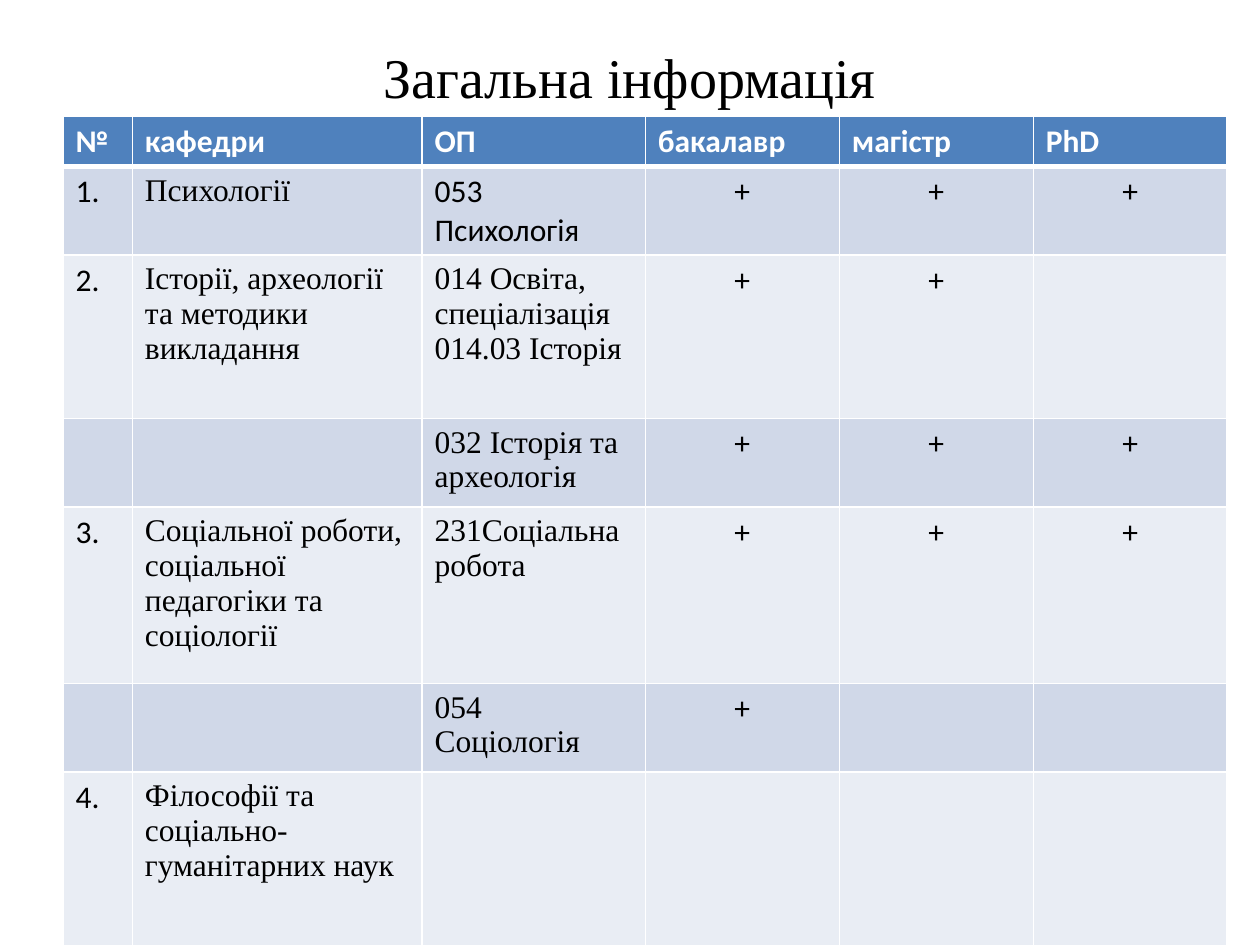
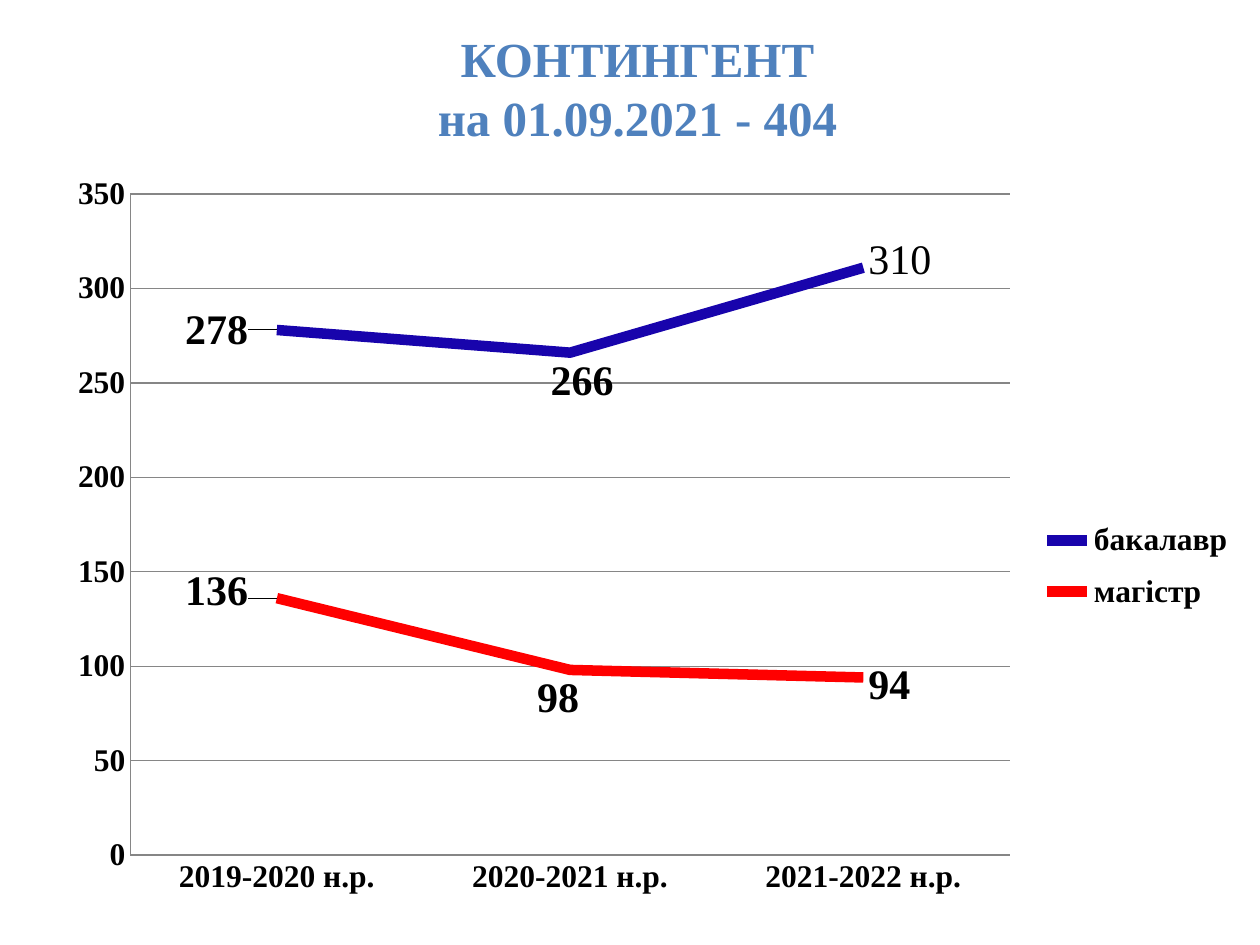
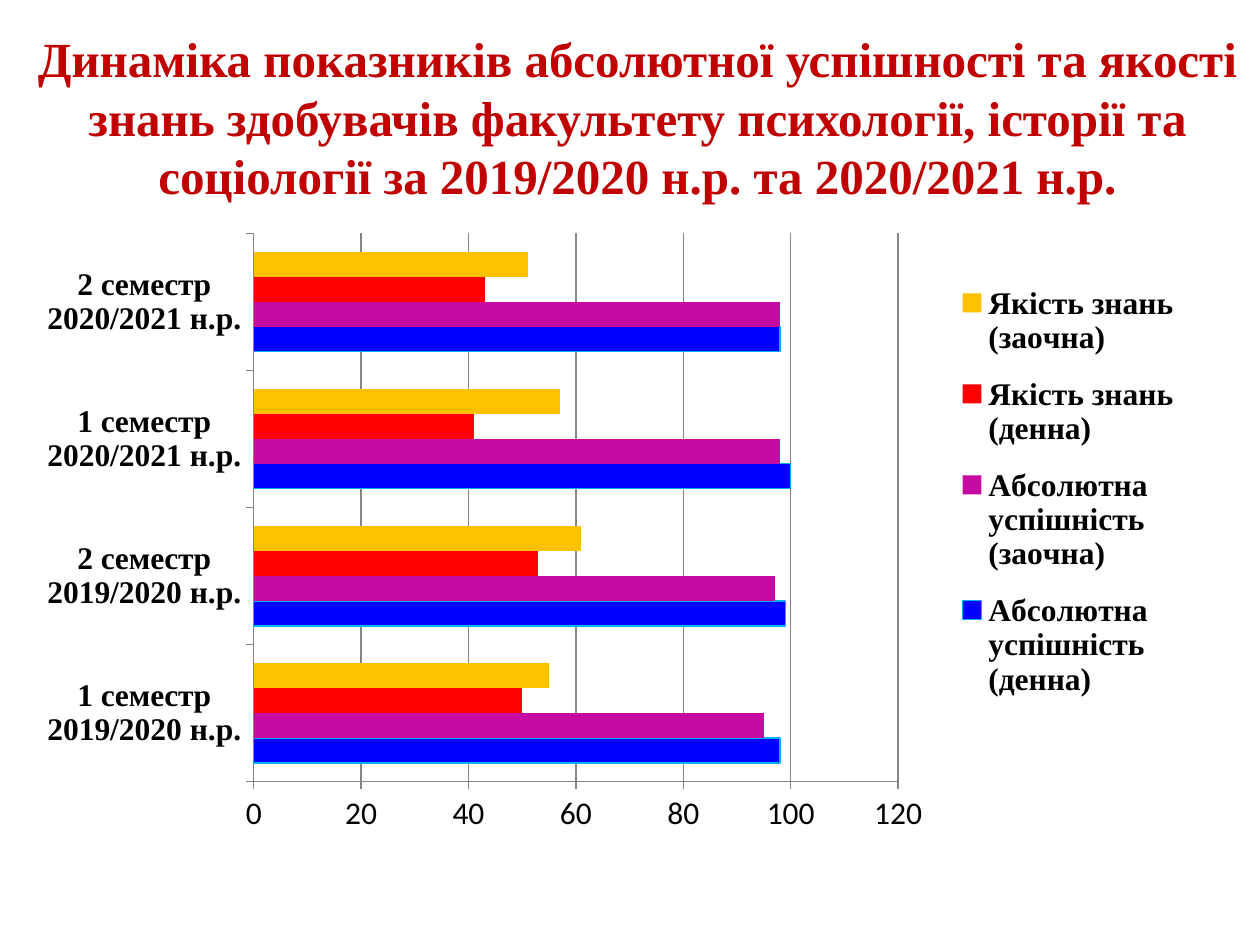
from dataclasses import dataclass

from lxml import etree
from pptx import Presentation
from pptx.chart.axis import _BaseAxis
from pptx.chart.chart import Chart
from pptx.chart.data import CategoryChartData
from pptx.chart.series import LineSeries
from pptx.dml.color import RGBColor
from pptx.enum.chart import XL_CHART_TYPE, XL_LABEL_POSITION, XL_LEGEND_POSITION, XL_TICK_MARK
from pptx.enum.text import MSO_ANCHOR, PP_ALIGN
from pptx.oxml.ns import qn
from pptx.slide import Slide
from pptx.table import _Cell
from pptx.text.text import Font, TextFrame
from pptx.util import Cm, Pt

BLACK = RGBColor(0x00, 0x00, 0x00)
WHITE = RGBColor(0xFF, 0xFF, 0xFF)
BLUE = RGBColor(0x4F, 0x81, 0xBD)
DARK_RED = RGBColor(0xC0, 0x00, 0x00)
BAND_DARK = RGBColor(0xD0, 0xD8, 0xE8)
BAND_LIGHT = RGBColor(0xE9, 0xED, 0xF4)
AXIS_GREY = RGBColor(0x86, 0x86, 0x86)
INDIGO = RGBColor(0x18, 0x04, 0xAC)
RED = RGBColor(0xFF, 0x00, 0x00)
PURE_BLUE = RGBColor(0x00, 0x00, 0xFF)
SKY = RGBColor(0x00, 0xB0, 0xF0)
PURPLE = RGBColor(0xC5, 0x0B, 0xA2)
AMBER = RGBColor(0xFF, 0xC0, 0x00)

SERIF = "Times New Roman"
SANS = "Calibri"


@dataclass(frozen=True)
class Box:
    """A place in centimetres, or in fractions of a chart."""

    left: float
    top: float
    width: float
    height: float

    def lengths(self) -> tuple[Cm, Cm, Cm, Cm]:
        return Cm(self.left), Cm(self.top), Cm(self.width), Cm(self.height)


@dataclass(frozen=True)
class Programme:
    number: str
    department: str
    name: str
    degrees: int
    height: float
    font: str = SERIF


@dataclass(frozen=True)
class PointLabel:
    """A label's side of its point and its shift in fractions of the chart."""

    position: XL_LABEL_POSITION
    dx: float
    dy: float
    text: str = ""


@dataclass(frozen=True)
class Measure:
    name: str
    values: tuple[int, ...]
    color: RGBColor
    outline: RGBColor | None = None
    labels: tuple[PointLabel, ...] = ()


@dataclass(frozen=True)
class ChartPlan:
    kind: XL_CHART_TYPE
    place: Box
    plot: Box
    legend: Box
    categories: tuple[str, ...]
    measures: tuple[Measure, ...]
    maximum: int
    step: int
    ticks: XL_TICK_MARK
    value_font: str
    value_bold: bool


DEGREES = ("бакалавр", "магістр", "PhD")
HEADINGS = ("№", "кафедри", "ОП") + DEGREES
COLUMN_WIDTHS = (1.4, 5.84, 4.5) + (3.91,) * len(DEGREES)
HEADER_HEIGHT = 1.02
PROGRAMMES = (
    Programme("1.", "Психології", "053 Психологія", 3, 1.78, SANS),
    Programme("2.", "Історії, археології та методики викладання",
              "014 Освіта, спеціалізація 014.03 Історія", 2, 3.3),
    Programme("", "", "032 Історія та археологія", 3, 1.78),
    Programme("3.", "Соціальної роботи, соціальної педагогіки та соціології",
              "231Соціальна робота", 3, 3.56),
    Programme("", "", "054 Соціологія", 1, 1.78),
    Programme("4.", "Філософії та соціально-гуманітарних наук", "", 0, 3.56),
)

LEFT, BELOW, RIGHT = XL_LABEL_POSITION.LEFT, XL_LABEL_POSITION.BELOW, XL_LABEL_POSITION.RIGHT
ENROLMENT = ChartPlan(
    kind=XL_CHART_TYPE.LINE,
    place=Box(1.09, 3.28, 24, 15.06),
    plot=Box(0.064, 0.042, 0.739, 0.885),
    legend=Box(0.825, 0.46, 0.17, 0.16),
    categories=("2019-2020 н.р.", "2020-2021 н.р.", "2021-2022 н.р."),
    measures=(
        Measure("бакалавр", (278, 266, 311), INDIGO, labels=(
            PointLabel(LEFT, -0.02, 0), PointLabel(BELOW, 0.01, 0),
            PointLabel(RIGHT, 0, -0.01, "310"))),
        Measure("магістр", (136, 98, 94), RED, labels=(
            PointLabel(LEFT, -0.02, -0.01), PointLabel(BELOW, -0.01, 0),
            PointLabel(RIGHT, 0, 0.01))),
    ),
    maximum=350, step=50, ticks=XL_TICK_MARK.NONE, value_font=SERIF, value_bold=True,
)
PERFORMANCE = ChartPlan(
    kind=XL_CHART_TYPE.BAR_CLUSTERED,
    place=Box(0.51, 4.45, 23.62, 12.57),
    plot=Box(0.195, 0.02, 0.55, 0.88),
    legend=Box(0.79, 0.07, 0.2, 0.73),
    categories=tuple(f"{term} семестр\n{year} н.р."
                     for year in ("2019/2020", "2020/2021") for term in (1, 2)),
    measures=(
        Measure("Абсолютна\nуспішність\n(денна)", (98, 99, 100, 98), PURE_BLUE, SKY),
        Measure("Абсолютна\nуспішність\n(заочна)", (95, 97, 98, 98), PURPLE),
        Measure("Якість знань\n(денна)", (50, 53, 41, 43), RED),
        Measure("Якість знань\n(заочна)", (55, 61, 57, 51), AMBER),
    ),
    maximum=120, step=20, ticks=XL_TICK_MARK.OUTSIDE, value_font=SANS, value_bold=False,
)


def style_font(font: Font, *, size: float = 18, name: str = SANS,
               color: RGBColor = BLACK, bold: bool = False) -> None:
    font.size = Pt(size)
    font.name = name
    font.bold = bold
    font.color.rgb = color


def write_text(frame: TextFrame, text: str, *, align: PP_ALIGN = PP_ALIGN.LEFT,
               size: float = 18, name: str = SANS, color: RGBColor = BLACK,
               bold: bool = False) -> None:
    paragraph = frame.paragraphs[0]
    paragraph.text = text
    paragraph.alignment = align
    for run in paragraph.runs:
        style_font(run.font, size=size, name=name, color=color, bold=bold)


def add_title(slide: Slide, text: str, place: Box, *, size: float = 28,
              color: RGBColor = BLACK, bold: bool = True) -> None:
    frame = slide.shapes.add_textbox(*place.lengths()).text_frame
    frame.word_wrap = True
    frame.vertical_anchor = MSO_ANCHOR.MIDDLE
    write_text(frame, text, align=PP_ALIGN.CENTER, size=size, name=SERIF,
               color=color, bold=bold)


def paint_cell(cell: _Cell, fill: RGBColor, bottom: float, top: float) -> None:
    """Give the cell white borders, then its fill."""
    properties = cell._tc.get_or_add_tcPr()
    for side, width in (("L", 1), ("R", 1), ("T", top), ("B", bottom)):
        border = etree.SubElement(properties, qn(f"a:ln{side}"), w=str(Pt(width)))
        solid = etree.SubElement(border, qn("a:solidFill"))
        etree.SubElement(solid, qn("a:srgbClr"), val=str(WHITE))
    cell.fill.solid()
    cell.fill.fore_color.rgb = fill


def add_programme_table(slide: Slide, place: Box) -> None:
    table = slide.shapes.add_table(len(PROGRAMMES) + 1, len(HEADINGS), *place.lengths()).table
    for column, width in zip(table.columns, COLUMN_WIDTHS):
        column.width = Cm(width)
    table.rows[0].height = Cm(HEADER_HEIGHT)
    for column, heading in enumerate(HEADINGS):
        cell = table.cell(0, column)
        paint_cell(cell, BLUE, bottom=3, top=1)
        write_text(cell.text_frame, heading, color=WHITE, bold=True)

    for row, programme in enumerate(PROGRAMMES, start=1):
        table.rows[row].height = Cm(programme.height)
        marks = ["+" if level < programme.degrees else "" for level in range(len(DEGREES))]
        texts = [programme.number, programme.department, programme.name, *marks]
        fonts = [SANS, SERIF, programme.font] + [SANS] * len(DEGREES)
        for column, (text, font) in enumerate(zip(texts, fonts)):
            cell = table.cell(row, column)
            paint_cell(cell, BAND_DARK if row % 2 else BAND_LIGHT,
                       bottom=1, top=3 if row == 1 else 1)
            align = PP_ALIGN.CENTER if text == "+" else PP_ALIGN.LEFT
            write_text(cell.text_frame, text, name=font, align=align)


def set_layout(parent: etree._Element, index: int, **settings: str | float) -> None:
    """Put a manual layout into a chart part as its child number index."""
    for former in parent.findall(qn("c:layout")):
        parent.remove(former)
    layout = etree.Element(qn("c:layout"))
    manual = etree.SubElement(layout, qn("c:manualLayout"))
    for key, value in settings.items():
        etree.SubElement(manual, qn(f"c:{key}"), val=str(value))
    parent.insert(index, layout)


def place_part(part: etree._Element, index: int, box: Box, **target: str) -> None:
    set_layout(part, index, **target, xMode="edge", yMode="edge",
               x=box.left, y=box.top, w=box.width, h=box.height)


def style_axis(axis: _BaseAxis, ticks: XL_TICK_MARK, name: str, bold: bool) -> None:
    axis.major_tick_mark = ticks
    axis.minor_tick_mark = XL_TICK_MARK.NONE
    axis.format.line.color.rgb = AXIS_GREY
    axis.format.line.width = Pt(0.75)
    style_font(axis.tick_labels.font, name=name, bold=bold)


def add_point_labels(series: LineSeries, labels: tuple[PointLabel, ...]) -> None:
    for index, label in enumerate(labels):
        data_label = series.points[index].data_label
        if label.text:
            write_text(data_label.text_frame, label.text, size=24, name=SERIF,
                       align=PP_ALIGN.CENTER)
        else:
            style_font(data_label.font, size=24, name=SERIF, bold=True)
        data_label.position = label.position
        element = series._element.xpath(f"c:dLbls/c:dLbl[c:idx/@val='{index}']")[0]
        set_layout(element, 1, x=label.dx, y=label.dy)


def style_series(chart: Chart, plan: ChartPlan) -> None:
    for series, measure in zip(chart.plots[0].series, plan.measures):
        if plan.kind == XL_CHART_TYPE.LINE:
            series.smooth = False
            series.format.line.color.rgb = measure.color
            series.format.line.width = Pt(6)
            add_point_labels(series, measure.labels)
            continue
        series.format.fill.solid()
        series.format.fill.fore_color.rgb = measure.color
        if measure.outline:
            series.format.line.color.rgb = measure.outline
            series.format.line.width = Pt(0.75)


def add_plan_chart(slide: Slide, plan: ChartPlan) -> None:
    data = CategoryChartData()
    data.categories = plan.categories
    for measure in plan.measures:
        data.add_series(measure.name, measure.values)
    chart = slide.shapes.add_chart(plan.kind, *plan.place.lengths(), data).chart
    chart.has_title = False
    style_font(chart.font)

    plot = chart.plots[0]
    plot.vary_by_categories = False
    if plan.kind == XL_CHART_TYPE.BAR_CLUSTERED:
        plot.gap_width = 150
    style_series(chart, plan)

    style_axis(chart.category_axis, plan.ticks, SERIF, True)
    values = chart.value_axis
    style_axis(values, plan.ticks, plan.value_font, plan.value_bold)
    values.minimum_scale = 0
    values.maximum_scale = plan.maximum
    values.major_unit = plan.step
    values.has_major_gridlines = True
    values.major_gridlines.format.line.color.rgb = AXIS_GREY
    values.major_gridlines.format.line.width = Pt(0.75)

    chart.has_legend = True
    chart.legend.position = XL_LEGEND_POSITION.RIGHT
    chart.legend.include_in_layout = False
    style_font(chart.legend.font, name=SERIF, bold=True)
    place_part(chart.legend._element, 1, plan.legend)
    place_part(chart._chartSpace.chart.plotArea, 0, plan.plot, layoutTarget="inner")


def main() -> None:
    presentation = Presentation()
    presentation.slide_width = Cm(25.4)
    presentation.slide_height = Cm(19.05)
    blank = presentation.slide_layouts[6]

    overview = presentation.slides.add_slide(blank)
    add_title(overview, "Загальна інформація", Box(1.27, 0.76, 22.86, 1.55),
              size=32, bold=False)
    add_programme_table(overview, Box(1.27, 2.34, 23.42, 16.76))

    enrolment = presentation.slides.add_slide(blank)
    add_title(enrolment, "КОНТИНГЕНТ\nна 01.09.2021 - 404",
              Box(2.69, 0.58, 20.32, 2.36), color=BLUE)
    add_plan_chart(enrolment, ENROLMENT)

    performance = presentation.slides.add_slide(blank)
    add_title(performance,
              "Динаміка показників абсолютної успішності та якості знань здобувачів "
              "факультету психології, історії та соціології за 2019/2020 н.р. "
              "та 2020/2021 н.р.",
              Box(0.3, 0.76, 25.1, 3.18), color=DARK_RED)
    add_plan_chart(performance, PERFORMANCE)

    presentation.save("out.pptx")


if __name__ == "__main__":
    main()
